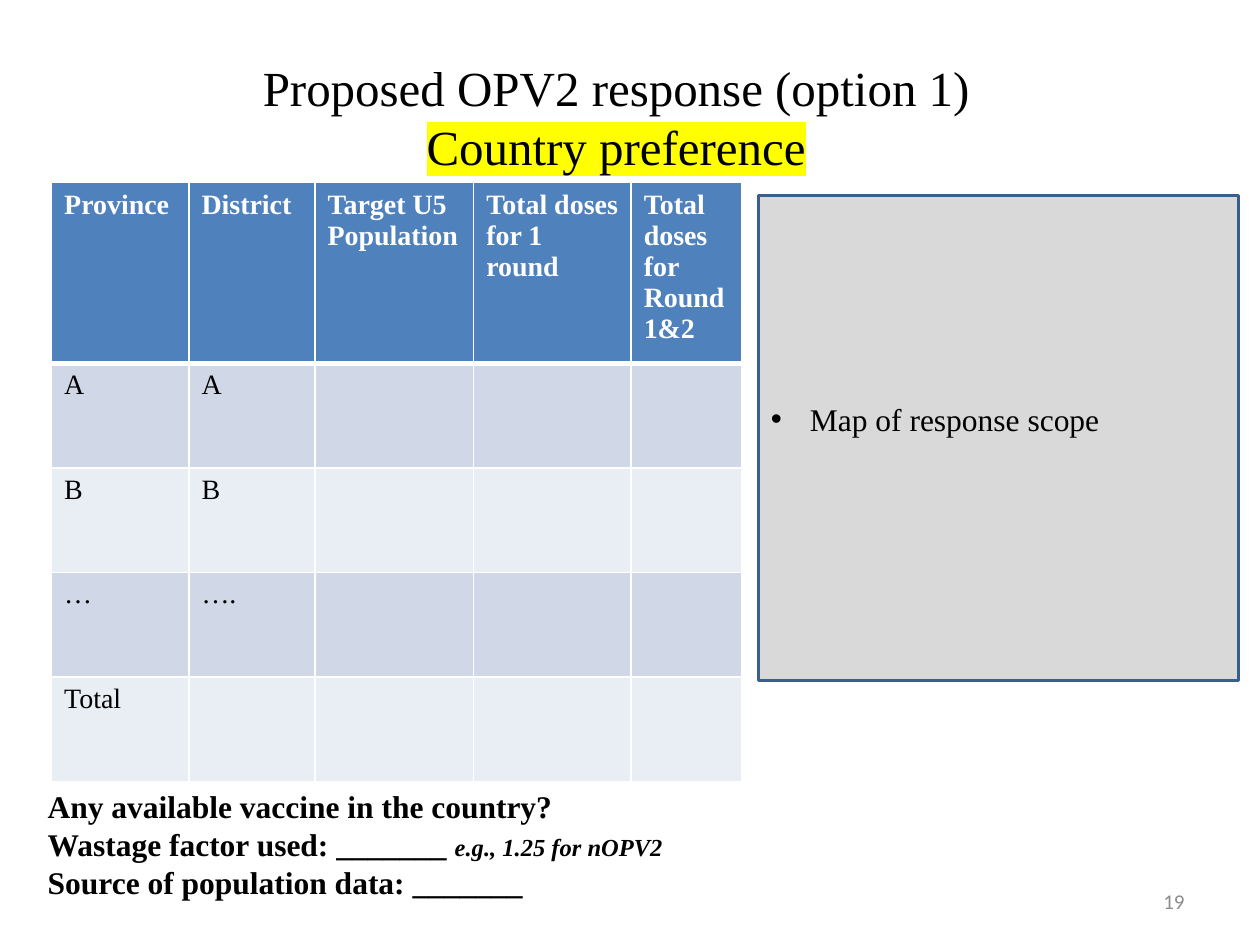
from lxml import etree
from pptx import Presentation, util as u
from pptx.dml.color import RGBColor
from pptx.enum import shapes, text
from pptx.oxml.ns import qn

COLORS = {"ink": "000000", "paper": "FFFFFF", "header": "4F81BD", "odd": "D0D8E8",
          "even": "E9EDF4", "panel": "D9D9D9", "outline": "3A5F8C",
          "mark": "FFFF00", "muted": "8C8C8C"}
SERIF, SANS = "Times New Roman", "Calibri"
COLUMNS, ROWS = 100, 75
ALIGN, ANCHOR = text.PP_ALIGN, text.MSO_ANCHOR


def rgb(name):
    return RGBColor.from_string(COLORS[name])


def add_color(parent, tag, name):
    """Append a colour-holding element to parent and return it."""
    holder = etree.SubElement(parent, qn(tag))
    etree.SubElement(holder, qn("a:srgbClr"), val=COLORS[name])
    return holder


def write(para, words, size=18, font=SERIF, color="ink", bold=False, italic=False,
          highlight=None):
    span = para.add_run()
    span.text = words
    style = span.font
    style.size, style.name = u.Pt(size), font
    style.bold, style.italic = bold, italic
    style.color.rgb = rgb(color)
    if highlight:
        props = span._r.get_or_add_rPr()
        props.find(qn("a:solidFill")).addnext(add_color(props, "a:highlight", highlight))


def set_borders(cell, **widths):
    """Draw white borders; sides L, R, T and B give widths in points."""
    props = cell._tc.get_or_add_tcPr()
    for side in "LRTB":
        line = etree.SubElement(props, qn(f"a:ln{side}"), w=str(u.Pt(widths.get(side, 1))))
        add_color(line, "a:solidFill", "paper")


class SlideBuilder:
    """Places elements on one slide, measured in grid columns and rows."""

    def __init__(self, deck):
        self.column = deck.slide_width / COLUMNS
        self.row = deck.slide_height / ROWS
        self.page = deck.slides.add_slide(deck.slide_layouts[5])

    def area(self, left, top, width, height):
        return (round(left * self.column), round(top * self.row),
                round(width * self.column), round(height * self.row))

    def title(self, area, first, second):
        box = self.page.shapes.title
        box.left, box.top, box.width, box.height = self.area(*area)
        box.text_frame.vertical_anchor = ANCHOR.MIDDLE
        para = box.text_frame.paragraphs[0]
        para.alignment = ALIGN.CENTER
        write(para, first, size=28)
        para.add_line_break()
        write(para, second, size=28, highlight="mark")

    def textbox(self, area, lines, align=ALIGN.LEFT, anchor=ANCHOR.TOP, wrap=True):
        """Each line is a list of (words, format) pairs."""
        frame = self.page.shapes.add_textbox(*self.area(*area)).text_frame
        frame.word_wrap, frame.vertical_anchor = wrap, anchor
        for index, line in enumerate(lines):
            para = frame.add_paragraph() if index else frame.paragraphs[0]
            para.alignment = align
            for words, style in line:
                write(para, words, **style)

    def table(self, area, widths, heights, records):
        table = self.page.shapes.add_table(len(heights), len(widths), *self.area(*area)).table
        for column, width in zip(table.columns, widths):
            column.width = round(width * self.column)
        for index, (row, height, record) in enumerate(zip(table.rows, heights, records)):
            row.height = round(height * self.row)
            header = index == 0
            fill = "header" if header else "odd" if index % 2 else "even"
            for cell, words in zip(row.cells, record):
                set_borders(cell, B=3 if header else 1, T=3 if index == 1 else 1)
                cell.fill.solid()
                cell.fill.fore_color.rgb = rgb(fill)
                if words:
                    write(cell.text_frame.paragraphs[0], words, size=16, bold=header,
                          color="paper" if header else "ink")

    def panel(self, area, words):
        box = self.page.shapes.add_shape(shapes.MSO_SHAPE.RECTANGLE, *self.area(*area))
        box.shadow.inherit = False
        box.fill.solid()
        box.fill.fore_color.rgb = rgb("panel")
        box.line.color.rgb = rgb("outline")
        box.line.width = u.Pt(2)
        frame = box.text_frame
        frame.vertical_anchor = ANCHOR.MIDDLE
        frame.margin_bottom = u.Inches(0.35)
        para = frame.paragraphs[0]
        para.alignment = ALIGN.LEFT
        props = para._p.get_or_add_pPr()
        indent = u.Inches(0.31)
        props.set("marL", str(indent))
        props.set("indent", str(-indent))
        etree.SubElement(props, qn("a:buFont"), typeface="Arial")
        etree.SubElement(props, qn("a:buChar"), char="•")
        write(para, words)


def main():
    deck = Presentation()
    deck.slide_width, deck.slide_height = u.Inches(10), u.Inches(7.5)
    slide = SlideBuilder(deck)
    slide.title((2.8, 3, 92.2, 12.5), "Proposed OPV2 response (option 1)", "Country preference")
    slide.textbox((71.7, 69.5, 23.3, 4),
                  [[("19", dict(size=12, font=SANS, color="muted"))]],
                  align=ALIGN.RIGHT, anchor=ANCHOR.MIDDLE)
    slide.table((4.1, 14.5, 54.8, 47.4), [10.9, 10, 12.6, 12.5, 8.8], [14.1] + [8.3] * 4, [
        ["Province", "District", "Target U5 Population", "Total doses for 1 round",
         "Total doses for Round 1&2"],
        ["A", "A", "", "", ""],
        ["B", "B", "", "", ""],
        ["…", "….", "", "", ""],
        ["Total", "", "", "", ""],
    ])
    slide.panel((60.2, 15.5, 38.1, 38.5), "Map of response scope")
    strong = dict(bold=True)
    slide.textbox((2.8, 62, 51.3, 16.2), [
        [("Any available vaccine in the country?", strong)],
        [("Wastage factor used: _______ ", strong),
         ("e.g., 1.25 for nOPV2", dict(size=14, bold=True, italic=True))],
        [("Source of population data: _______", strong)],
    ], wrap=False)
    deck.save("out.pptx")


if __name__ == "__main__":
    main()
